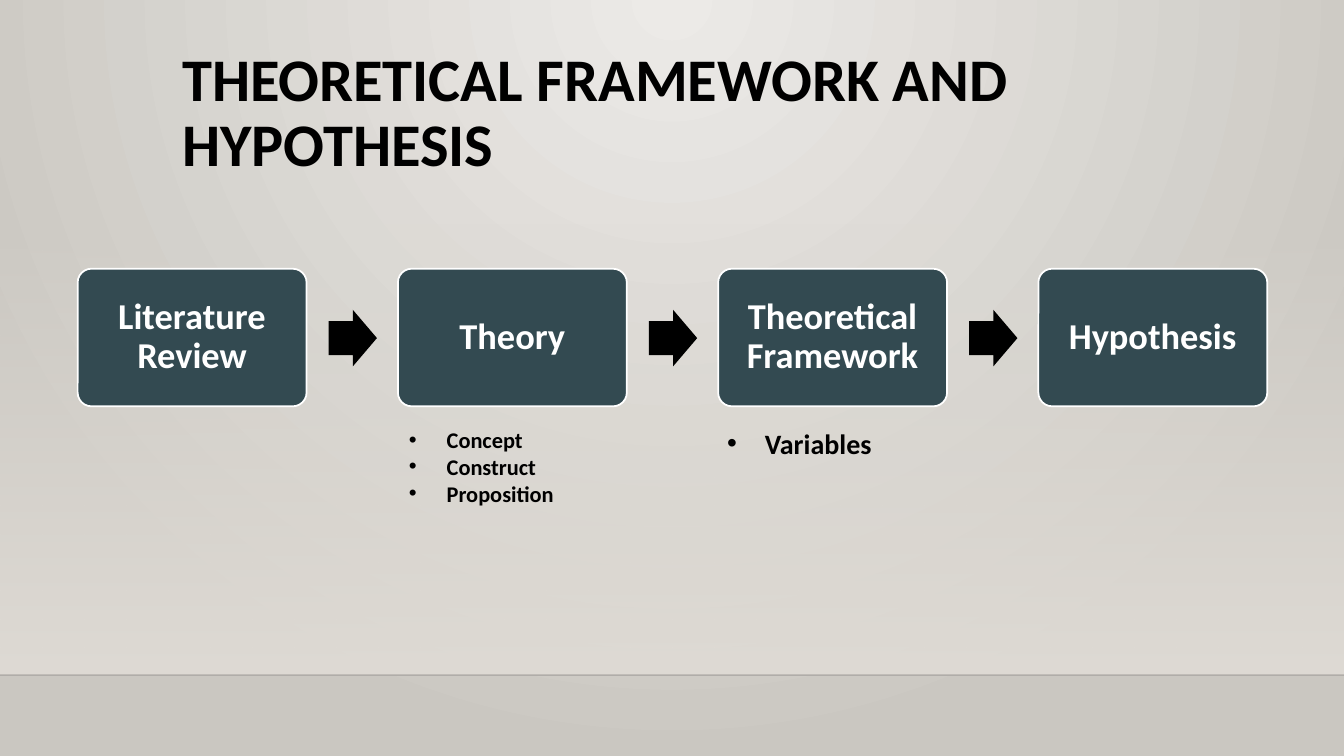
from dataclasses import dataclass

from lxml.etree import SubElement
from pptx import Presentation
from pptx.dml.color import RGBColor
from pptx.enum.shapes import MSO_CONNECTOR, MSO_SHAPE
from pptx.enum.text import MSO_ANCHOR, PP_ALIGN
from pptx.oxml.ns import qn
from pptx.shapes.autoshape import Shape
from pptx.slide import Slide
from pptx.text.text import TextFrame, _Paragraph
from pptx.util import Emu, Pt

PX = 9525
SLIDE_W, SLIDE_H = 1280, 720
FONT = "Calibri"
BLACK, WHITE, TEAL = "000000", "FFFFFF", "334A51"

STAGE_LEFT, STAGE_TOP, STAGE_W, STAGE_H = 74, 256, 218, 131
STAGE_PITCH = 305
ARROW_OFFSET, ARROW_TOP, ARROW_W, ARROW_H = 239, 295, 46, 54
HORIZON = 643


@dataclass(frozen=True)
class Box:
    left: int
    top: int
    width: int
    height: int


@dataclass(frozen=True)
class BulletList:
    box: Box
    size: int
    items: tuple[str, ...]


STAGES = ("Literature Review", "Theory", "Theoretical Framework", "Hypothesis")
BULLET_LISTS = (
    BulletList(Box(380, 401, 173, 87), 16, ("Concept", "Construct", "Proposition")),
    BulletList(Box(683, 401, 179, 42), 20, ("Variables",)),
)


def px(length: int) -> Emu:
    return Emu(length * PX)


def color(hex_value: str) -> RGBColor:
    return RGBColor.from_string(hex_value)


def place(box: Box) -> tuple[Emu, ...]:
    return px(box.left), px(box.top), px(box.width), px(box.height)


def set_alpha(element, percent: int) -> None:
    SubElement(element, qn("a:alpha")).set("val", str(percent * 1000))


def add_run(paragraph: _Paragraph, text: str, size: float, hex_value: str) -> None:
    run = paragraph.add_run()
    run.text = text
    run.font.name = FONT
    run.font.size = Pt(size)
    run.font.bold = True
    run.font.color.rgb = color(hex_value)


def add_text_box(slide: Slide, box: Box) -> TextFrame:
    frame = slide.shapes.add_textbox(*place(box)).text_frame
    frame.word_wrap = True
    return frame


def add_solid(slide: Slide, kind: MSO_SHAPE, box: Box, fill: str) -> Shape:
    shape = slide.shapes.add_shape(kind, *place(box))
    shape.shadow.inherit = False
    shape.fill.solid()
    shape.fill.fore_color.rgb = color(fill)
    shape.line.fill.background()
    return shape


def paint_background(slide: Slide) -> None:
    fill = slide.background.fill
    fill.gradient()
    for stop, shade in zip(fill.gradient_stops, ("ECEAE7", "CAC7C1")):
        stop.color.rgb = color(shade)
    gradient = slide.element.find(".//" + qn("a:gradFill"))
    gradient.remove(gradient.find(qn("a:lin")))
    radial = SubElement(gradient, qn("a:path"))
    radial.set("path", "circle")
    focus = SubElement(radial, qn("a:fillToRect"))
    for side, value in zip("ltrb", (43, 0, 43, 100)):
        focus.set(side, str(value * 1000))


def add_wall(slide: Slide) -> None:
    wall = add_solid(slide, MSO_SHAPE.RECTANGLE, Box(0, 212, SLIDE_W, HORIZON - 212), "DFDBD5")
    wall.fill.gradient()
    wall.fill.gradient_angle = 270
    for stop in wall.fill.gradient_stops:
        stop.color.rgb = color("DFDBD5")
    set_alpha(wall.element.find(".//" + qn("a:gs")).find(qn("a:srgbClr")), 0)


def add_horizon(slide: Slide) -> None:
    horizon = slide.shapes.add_connector(
        MSO_CONNECTOR.STRAIGHT, 0, px(HORIZON), px(SLIDE_W), px(HORIZON)
    )
    horizon.line.width = Pt(1)
    horizon.line.color.rgb = color("000001")
    set_alpha(horizon.element.find(".//" + qn("a:srgbClr")), 20)
    SubElement(horizon.element.spPr, qn("a:effectLst"))


def add_title(slide: Slide) -> None:
    paragraph = add_text_box(slide, Box(164, 42, 935, 158)).paragraphs[0]
    paragraph.line_spacing = 0.9
    add_run(paragraph, "THEORETICAL FRAMEWORK AND HYPOTHESIS", 43.2, BLACK)


def add_stage(slide: Slide, left: int, label: str) -> None:
    stage = add_solid(
        slide, MSO_SHAPE.ROUNDED_RECTANGLE, Box(left, STAGE_TOP, STAGE_W, STAGE_H), TEAL
    )
    stage.adjustments[0] = 0.1
    stage.line.color.rgb = color(WHITE)
    stage.line.width = Pt(1.25)
    frame = stage.text_frame
    frame.word_wrap = True
    frame.vertical_anchor = MSO_ANCHOR.MIDDLE
    frame.margin_left = frame.margin_right = px(14)
    frame.margin_top = frame.margin_bottom = px(14)
    paragraph = frame.paragraphs[0]
    paragraph.alignment = PP_ALIGN.CENTER
    paragraph.line_spacing = 0.9
    add_run(paragraph, label, 26, WHITE)


def add_arrow(slide: Slide, left: int) -> None:
    arrow = add_solid(
        slide, MSO_SHAPE.RIGHT_ARROW, Box(left, ARROW_TOP, ARROW_W, ARROW_H), BLACK
    )
    arrow.adjustments[0] = 0.6
    arrow.adjustments[1] = 0.5


def add_bullets(slide: Slide, bullets: BulletList) -> None:
    frame = add_text_box(slide, bullets.box)
    for index, item in enumerate(bullets.items):
        paragraph = frame.add_paragraph() if index else frame.paragraphs[0]
        properties = paragraph._p.get_or_add_pPr()
        properties.set("marL", str(px(36)))
        properties.set("indent", str(px(-36)))
        SubElement(properties, qn("a:buFont")).set("typeface", "Arial")
        SubElement(properties, qn("a:buChar")).set("char", "•")
        add_run(paragraph, item, bullets.size, BLACK)


def main() -> None:
    presentation = Presentation()
    presentation.slide_width, presentation.slide_height = px(SLIDE_W), px(SLIDE_H)
    slide = presentation.slides.add_slide(presentation.slide_layouts[6])
    paint_background(slide)
    add_wall(slide)
    add_horizon(slide)
    add_title(slide)
    for index, label in enumerate(STAGES):
        left = STAGE_LEFT + index * STAGE_PITCH
        add_stage(slide, left, label)
        if index < len(STAGES) - 1:
            add_arrow(slide, left + ARROW_OFFSET)
    for bullets in BULLET_LISTS:
        add_bullets(slide, bullets)
    presentation.save("out.pptx")


if __name__ == "__main__":
    main()
